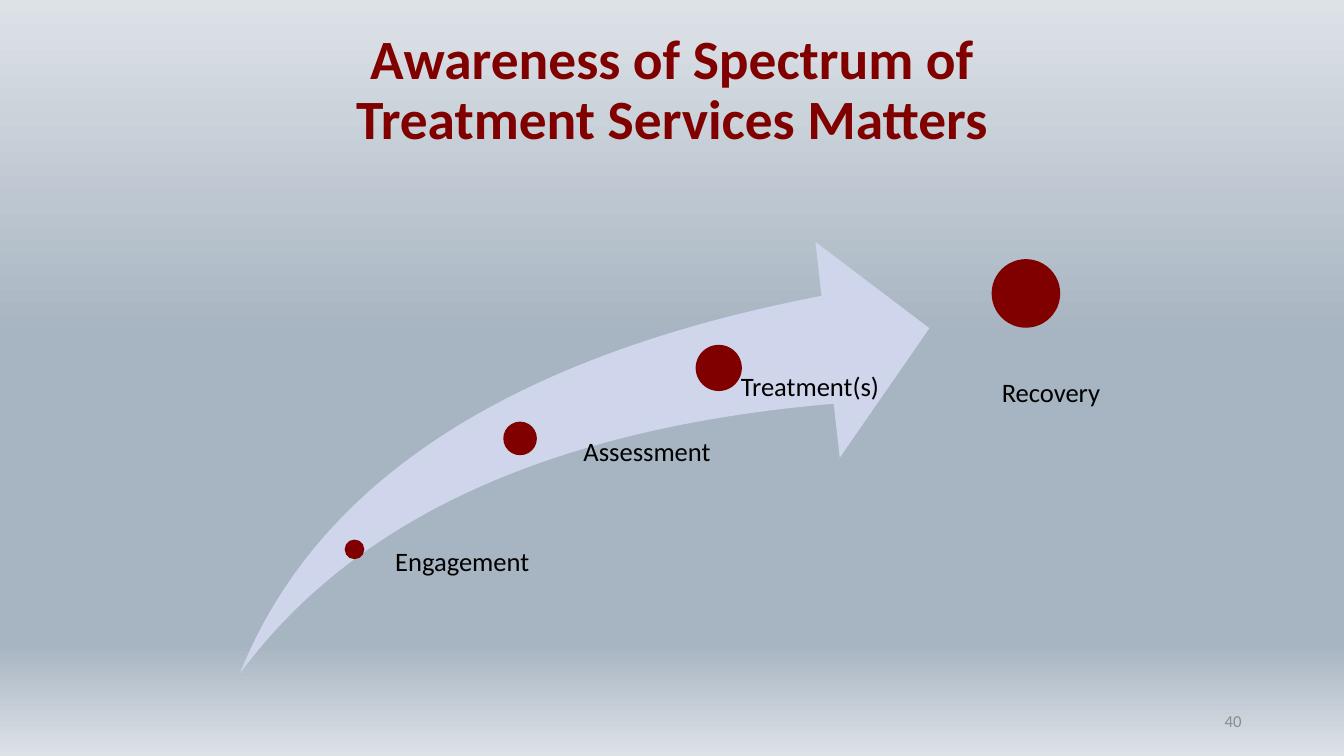
from copy import deepcopy

from pptx import Presentation
from pptx.dml.color import RGBColor
from pptx.enum.shapes import MSO_SHAPE
from pptx.enum.text import MSO_ANCHOR, PP_ALIGN
from pptx.oxml.ns import qn
from pptx.util import Pt

MAROON = RGBColor(0x80, 0x00, 0x00)
LAVENDER = RGBColor(0xCF, 0xD5, 0xEA)
BLACK = RGBColor(0x00, 0x00, 0x00)
GRAY = RGBColor(0x8C, 0x8C, 0x8C)
MIST = RGBColor(0xDD, 0xE2, 0xE7)
SLATE = RGBColor(0xA7, 0xB4, 0xC1)

BACKGROUND_STOPS = [(0, MIST), (0.45, SLATE), (0.85, SLATE), (1, MIST)]

STAGES = [
    ("Engagement", (253.2, 392.4, 13), (275.8, 391.7, 114.5, 89.3), 6.5),
    ("Assessment", (371.5, 313.2, 23), (404.6, 313.2, 118, 167.8), 12.2),
    ("Treatment(s)", (513.4, 262.8, 32), (511.9, 267.1, 118, 213.9), 17.3),
]


def paint_background(slide):
    fill = slide.background.fill
    fill.gradient()
    fill.gradient_angle = 270
    stop_list = next(slide.background._cSld.iter(qn("a:gsLst")))
    for _ in range(len(BACKGROUND_STOPS) - len(stop_list)):
        stop_list.append(deepcopy(stop_list[0]))
    for stop, (position, color) in zip(fill.gradient_stops, BACKGROUND_STOPS):
        stop.position = position
        stop.color.rgb = color


def add_label(slide, text, box, size, color, inset=7.2, top=0, anchor=MSO_ANCHOR.TOP,
              align=PP_ALIGN.LEFT, spacing=0.9, bold=False, wrap=True):
    frame = slide.shapes.add_textbox(*map(Pt, box)).text_frame
    frame.word_wrap = wrap
    frame.vertical_anchor = anchor
    frame.margin_left = Pt(inset)
    frame.margin_top = frame.margin_bottom = Pt(top)
    frame.margin_right = Pt(7.2 if top else 0)
    paragraph = frame.paragraphs[0]
    paragraph.text = text
    paragraph.alignment = align
    paragraph.line_spacing = spacing
    for run in paragraph.runs:
        run.font.name = "Calibri"
        run.font.size = Pt(size)
        run.font.bold = bold
        run.font.color.rgb = color


def add_dot(slide, center_x, center_y, diameter):
    radius = diameter / 2
    dot = slide.shapes.add_shape(MSO_SHAPE.OVAL, Pt(center_x - radius), Pt(center_y - radius),
                                 Pt(diameter), Pt(diameter))
    dot.shadow.inherit = False
    dot.fill.solid()
    dot.fill.fore_color.rgb = MAROON
    dot.line.color.rgb = MAROON
    dot.line.width = Pt(1)


def add_swoosh(slide, left, top, width, height):
    swoosh = slide.shapes.add_shape(MSO_SHAPE.SWOOSH_ARROW, Pt(left), Pt(top), Pt(width), Pt(height))
    swoosh.adjustments[0] = swoosh.adjustments[1] = 0.25
    swoosh.shadow.inherit = False
    swoosh.fill.solid()
    swoosh.fill.fore_color.rgb = LAVENDER
    swoosh.line.fill.background()


def main():
    deck = Presentation()
    deck.slide_width, deck.slide_height = Pt(960), Pt(540)
    slide = deck.slides.add_slide(deck.slide_layouts[6])
    paint_background(slide)

    add_label(slide, "Awareness of Spectrum of\vTreatment Services Matters", (144, 25.9, 672, 79.2),
              39.6, MAROON, top=3.6, anchor=MSO_ANCHOR.MIDDLE, align=PP_ALIGN.CENTER, bold=True)
    add_swoosh(slide, 171.4, 172.8, 492.5, 308.2)
    for name, dot, box, inset in STAGES:
        add_dot(slide, *dot)
        add_label(slide, name, box, 19, BLACK, inset=inset)
    add_label(slide, "40", (678, 500.5, 216, 28.8), 12, GRAY, top=3.6,
              anchor=MSO_ANCHOR.MIDDLE, align=PP_ALIGN.RIGHT, spacing=1)
    add_dot(slide, 732.8, 209.6, 48)
    add_label(slide, "Recovery", (708.5, 265, 85.7, 30.2), 19, BLACK, top=3.6, spacing=1, wrap=False)

    deck.save("out.pptx")


if __name__ == "__main__":
    main()
